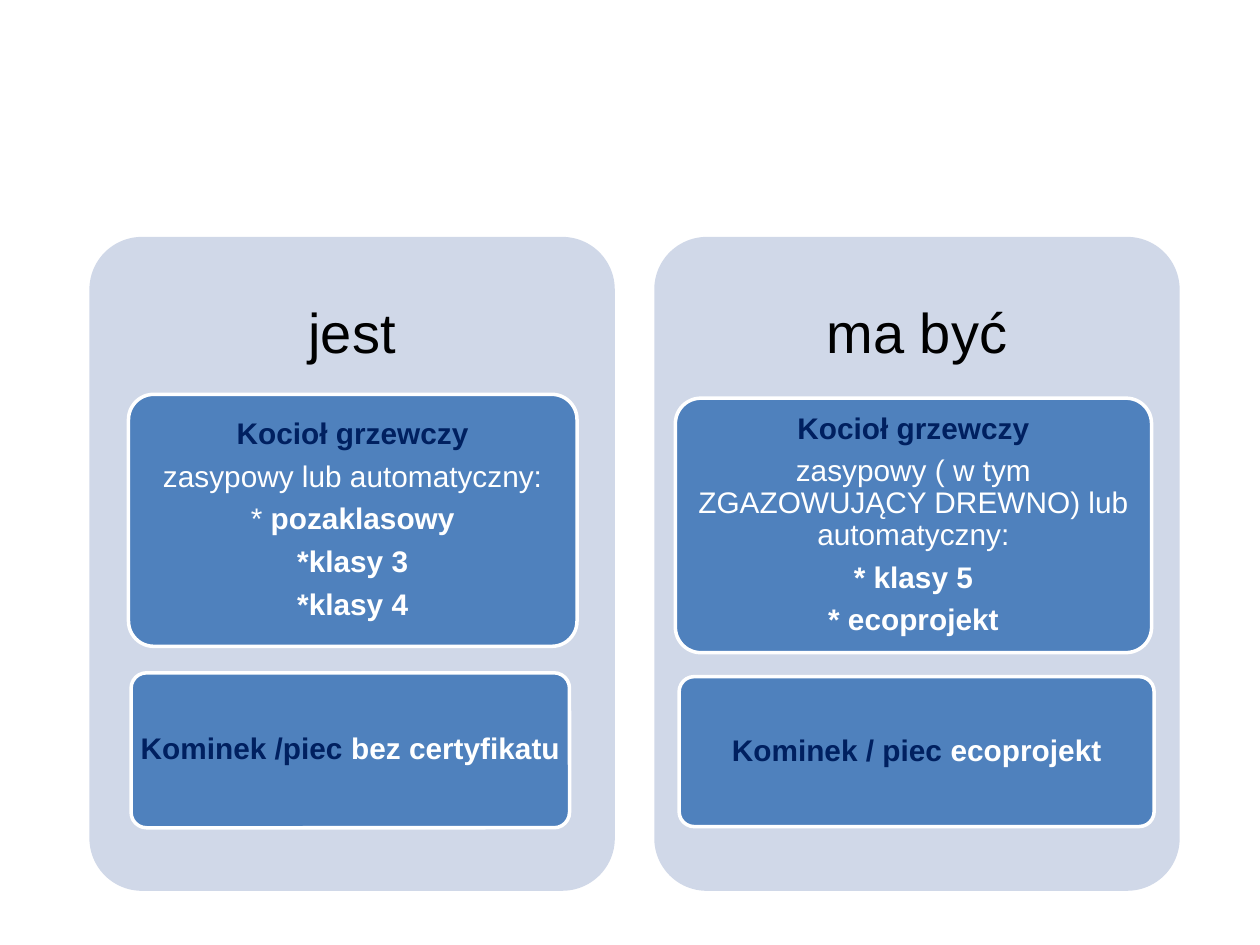
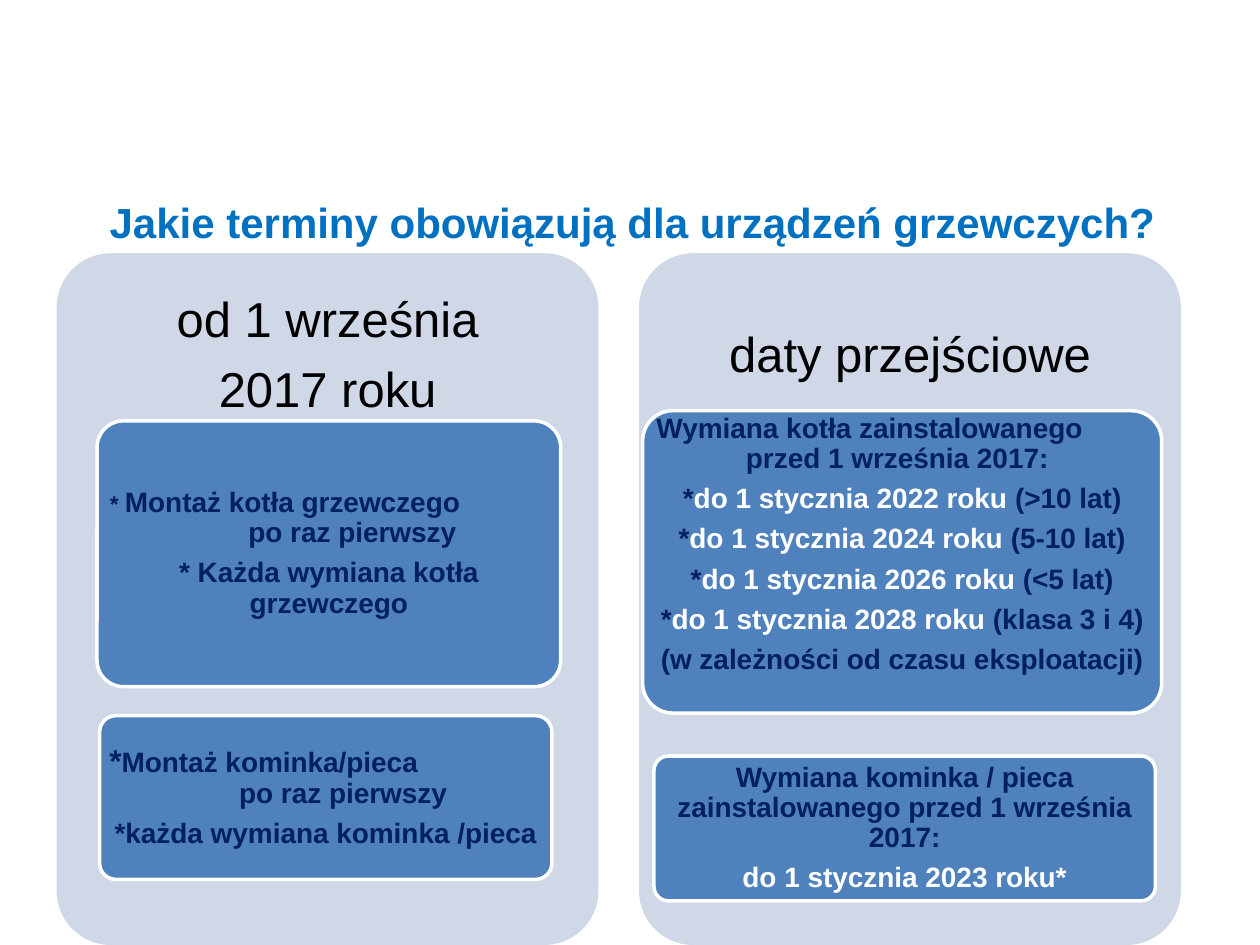
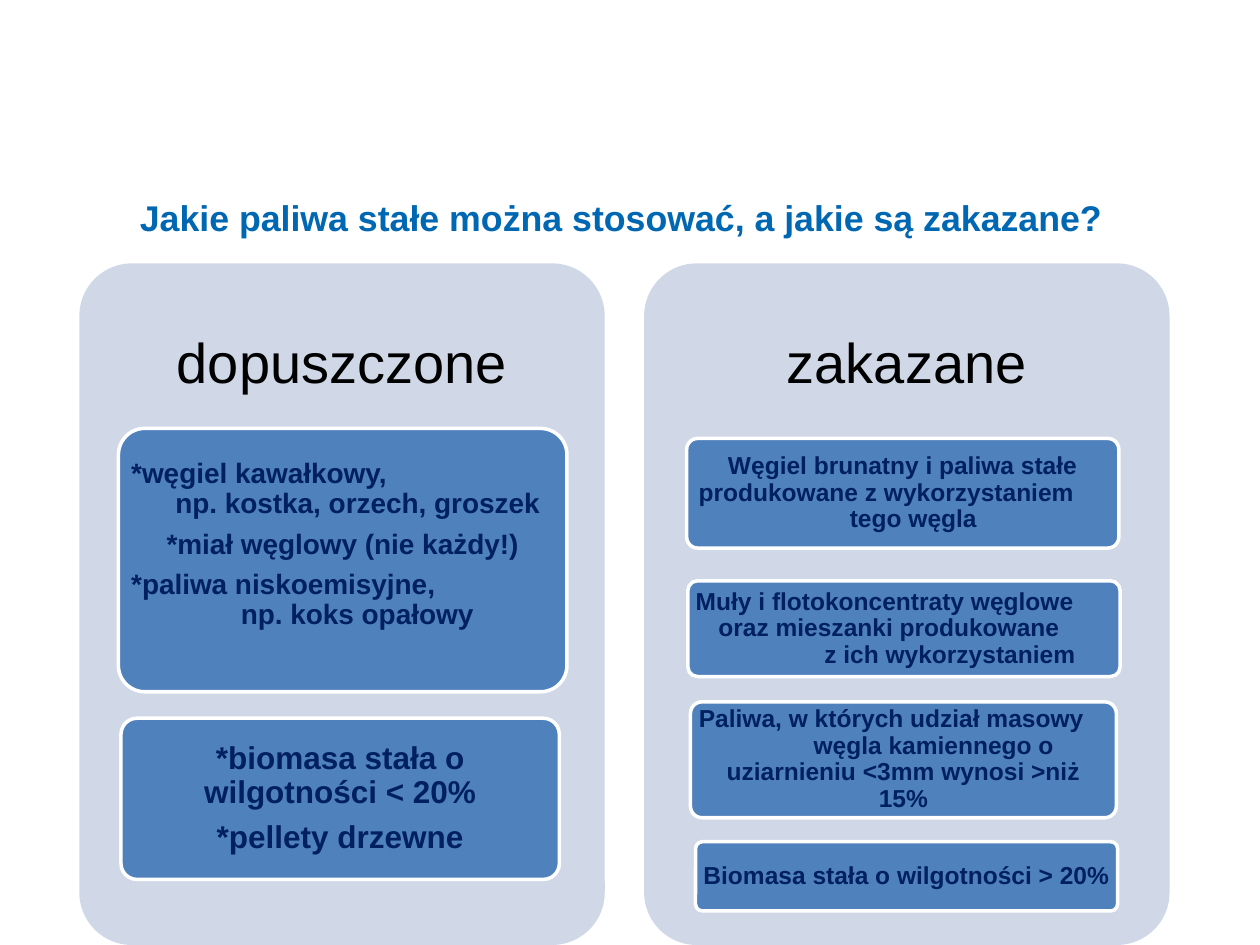
from dataclasses import dataclass

from pptx import Presentation
from pptx.dml.color import RGBColor
from pptx.enum.shapes import MSO_SHAPE
from pptx.enum.text import MSO_ANCHOR as Anchor, MSO_AUTO_SIZE as AutoSize, PP_ALIGN as Align
from pptx.util import Inches, Pt

NAVY, WHITE, BLACK = "002060", "FFFFFF", "000000"
PANEL, CARD = "D0D8E8", "4F81BD"
FONT = "Arial"
TITLE_ONLY, BLANK = 5, 6
HEADER_SHARE = 0.3
COLUMN_PITCH = 1.075


@dataclass
class Run:
    text: str
    color: str = NAVY
    bold: bool = True
    size: float = None


@dataclass
class Line:
    runs: list
    indent: float = None
    joined: bool = False


@dataclass
class Card:
    place: tuple
    size: float
    lines: list
    spare: float = 0


def navy(text, indent=None, joined=False):
    return Line([Run(text)], indent, joined)


def white(text, bold=True):
    return Line([Run(text, WHITE, bold)])


def deadline(date, group):
    return Line([Run("*"), Run(f"do 1 stycznia {date} roku ", WHITE), Run(group)])


SLIDES = [
    {
        "title": None,
        "panel": (0.71, 1.88, 4.17, 5.19),
        "header_size": 32,
        "columns": [
            (["jest"], [
                Card((1.02, 3.13, 3.56, 2), 17, [
                    navy("Kocioł grzewczy"),
                    white("zasypowy lub automatyczny:", False),
                    Line([Run("* ", WHITE, False), Run("pozaklasowy", WHITE)]),
                    white("*klasy 3"),
                    white("*klasy 4"),
                ]),
                Card((1.04, 5.34, 3.48, 1.23), 17, [
                    Line([Run("Kominek /piec "), Run("bez certyfikatu", WHITE)]),
                ]),
            ]),
            (["ma być"], [
                Card((5.36, 3.16, 3.78, 2.02), 17, [
                    navy("Kocioł grzewczy"),
                    white("zasypowy ( w tym ZGAZOWUJĄCY DREWNO) lub automatyczny:", False),
                    white("* klasy 5"),
                    white("* ecoprojekt"),
                ]),
                Card((5.39, 5.37, 3.77, 1.19), 17, [
                    Line([Run("Kominek / piec "), Run("ecoprojekt", WHITE)]),
                ]),
            ]),
        ],
    },
    {
        "title": ("Jakie terminy obowiązują dla urządzeń grzewczych?",
                  (0.87, 1.56, 8.61, 0.4), 24, "0070C0", 1),
        "panel": (0.45, 2.01, 4.3, 5.49),
        "header_size": 28,
        "columns": [
            (["od 1 września", "2017 roku"], [
                Card((0.77, 3.34, 3.68, 2.11), 16, [
                    Line([Run("* ", size=13), Run("Montaż kotła grzewczego")], 0, True),
                    navy("po raz pierwszy", 1.1),
                    navy("* Każda wymiana kotła grzewczego"),
                ]),
                Card((0.79, 5.68, 3.59, 1.3), 16, [
                    Line([Run("*", size=18), Run("Montaż kominka/pieca")], 0, True),
                    navy("po raz pierwszy", 1.03),
                    navy("*każda wymiana kominka /pieca"),
                ]),
            ]),
            (["daty przejściowe"], [
                Card((5.1, 3.26, 4.12, 2.4), 16, [
                    navy("Wymiana kotła zainstalowanego", 0, True),
                    navy("przed 1 września 2017:", 0.71),
                    deadline(2022, "(>10 lat)"),
                    deadline(2024, "(5-10 lat)"),
                    deadline(2026, "(<5 lat)"),
                    deadline(2028, "(klasa 3 i 4)"),
                    navy("(w zależności od czasu eksploatacji)"),
                ], 0.27),
                Card((5.19, 6, 3.98, 1.15), 16, [
                    navy("Wymiana kominka / pieca zainstalowanego przed 1 września 2017:"),
                    white("do 1 stycznia 2023 roku*"),
                ]),
            ]),
        ],
    },
    {
        "title": ("Jakie paliwa stałe można stosować, a jakie są zakazane?",
                  (1.11, 1.62, 7.83, 0.47), 20.4, "0067B2", 0.8),
        "panel": (0.63, 2.09, 4.17, 5.41),
        "header_size": 32,
        "columns": [
            (["dopuszczone"], [
                Card((0.94, 3.4, 3.56, 2.09), 16, [
                    navy("*węgiel kawałkowy,", 0, True),
                    navy("np. kostka, orzech, groszek", 0.35),
                    navy("*miał węglowy (nie każdy!)"),
                    navy("*paliwa niskoemisyjne,", 0, True),
                    navy("np. koks opałowy", 0.87),
                ], 0.24),
                Card((0.96, 5.7, 3.48, 1.28), 18, [
                    navy("*biomasa stała o wilgotności < 20%"),
                    navy("*pellety drzewne"),
                ]),
            ]),
            (["zakazane"], [
                Card((5.45, 3.48, 3.43, 0.87), 14, [
                    navy("Węgiel brunatny i paliwa stałe", joined=True),
                    navy("produkowane z wykorzystaniem", 0.03, True),
                    navy("tego węgla", 1.23),
                ]),
                Card((5.46, 4.61, 3.43, 0.76), 14, [
                    navy("Muły i flotokoncentraty węglowe", 0, True),
                    navy("oraz mieszanki produkowane", 0.18, True),
                    navy("z ich wykorzystaniem", 1.02),
                ]),
                Card((5.48, 5.57, 3.38, 0.92), 14, [
                    navy("Paliwa, w których udział masowy", 0, True),
                    navy("węgla kamiennego o", 0.91, True),
                    navy("uziarnieniu <3mm wynosi >niż", joined=True),
                    navy("15%"),
                ]),
                Card((5.52, 6.68, 3.35, 0.55), 14, [
                    navy("Biomasa stała o wilgotności > 20%"),
                ]),
            ]),
        ],
    },
]


def rgb(value):
    return RGBColor.from_string(value)


def inches(place):
    return [Inches(length) for length in place]


def set_frame(frame, side, top, bottom, anchor=Anchor.MIDDLE):
    frame.word_wrap = True
    frame.auto_size = AutoSize.NONE
    frame.vertical_anchor = anchor
    frame.margin_left = frame.margin_right = Inches(side)
    frame.margin_top, frame.margin_bottom = Inches(top), Inches(bottom)


def set_font(font, size, color, bold):
    font.name, font.size, font.bold = FONT, Pt(size), bold
    font.color.rgb = rgb(color)


def write_lines(frame, lines, size):
    for index, line in enumerate(lines):
        paragraph = frame.add_paragraph() if index else frame.paragraphs[0]
        paragraph.alignment = Align.CENTER if line.indent is None else Align.LEFT
        paragraph.line_spacing = 0.9
        paragraph.space_after = Pt(0 if line.joined else 0.35 * size)
        if line.indent:
            paragraph._p.get_or_add_pPr().set("marL", str(Inches(line.indent)))
        base = line.runs[0]
        set_font(paragraph.font, size, base.color, base.bold)
        for part in line.runs:
            run = paragraph.add_run()
            run.text = part.text
            if part.size:
                run.font.size = Pt(part.size)
            if part.color != base.color:
                run.font.color.rgb = rgb(part.color)
            if part.bold != base.bold:
                run.font.bold = part.bold


def add_rounded(slide, place, fill, outlined=False):
    shape = slide.shapes.add_shape(MSO_SHAPE.ROUNDED_RECTANGLE, *inches(place))
    shape.adjustments[0] = 0.1
    shape.shadow.inherit = False
    shape.fill.solid()
    shape.fill.fore_color.rgb = rgb(fill)
    if outlined:
        shape.line.color.rgb = rgb(WHITE)
        shape.line.width = Pt(2)
    else:
        shape.line.fill.background()
    return shape


def add_panel(slide, place, header, size):
    left, top, width, height = place
    add_rounded(slide, place, PANEL)
    box = slide.shapes.add_textbox(*inches((left, top, width, height * HEADER_SHARE)))
    set_frame(box.text_frame, 0.13, 0.13, 0.13)
    write_lines(box.text_frame, [Line([Run(text, BLACK, False)]) for text in header], size)


def add_card(slide, card):
    frame = add_rounded(slide, card.place, CARD, True).text_frame
    set_frame(frame, 0.04, 0.03, 0.03 + card.spare)
    write_lines(frame, card.lines, card.size)


def add_title(slide, text, place, size, color, spacing):
    title = slide.shapes.title
    title.left, title.top, title.width, title.height = inches(place)
    set_frame(title.text_frame, 0, 0, 0, Anchor.TOP)
    title.text_frame.text = text
    paragraph = title.text_frame.paragraphs[0]
    paragraph.alignment = Align.LEFT
    paragraph.line_spacing = spacing
    set_font(paragraph.font, size, color, True)


def add_slide(presentation, content):
    layout = TITLE_ONLY if content["title"] else BLANK
    slide = presentation.slides.add_slide(presentation.slide_layouts[layout])
    if content["title"]:
        add_title(slide, *content["title"])
    left, top, width, height = content["panel"]
    for column, (header, cards) in enumerate(content["columns"]):
        place = (left + column * width * COLUMN_PITCH, top, width, height)
        add_panel(slide, place, header, content["header_size"])
        for card in cards:
            add_card(slide, card)


def main():
    presentation = Presentation()
    presentation.slide_width, presentation.slide_height = Inches(10), Inches(7.5)
    for content in SLIDES:
        add_slide(presentation, content)
    presentation.save("out.pptx")


if __name__ == "__main__":
    main()
